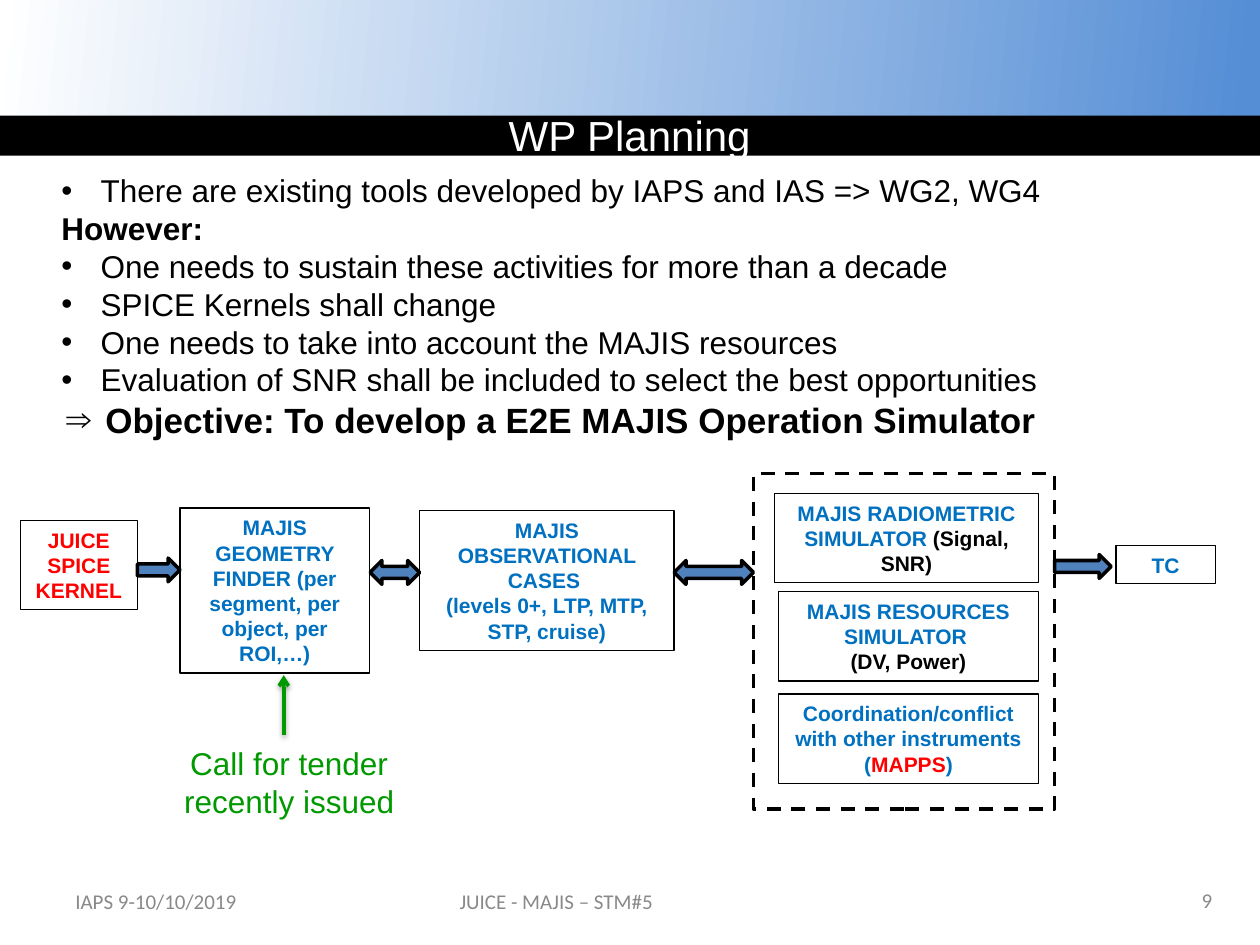
from lxml import etree
from pptx import Presentation
from pptx.dml.color import RGBColor
from pptx.enum import dml, shapes, text
from pptx.oxml import ns
from pptx.util import Cm, Pt

THEME = {
    "black": "000000", "white": "FFFFFF", "red": "FF0000", "blue": "0070C0",
    "green": "009900", "grey": "898989", "arrow": "4F81BD", "sky": "558ED5",
    "font": "Arial", "foot": "Calibri",
    "title": 24, "goal": 20, "body": 18, "small": 12,
}
KIND = shapes.MSO_SHAPE
LEFT, MID, RIGHT = text.PP_ALIGN.LEFT, text.PP_ALIGN.CENTER, text.PP_ALIGN.RIGHT

# Content: places are left, top, width, height in cm
TITLE = "WP Planning"
POINTS = [  # bullet, wording, size, bold, alignment
    ("•", "There are existing tools developed by IAPS and IAS => WG2, WG4", "body", False, LEFT),
    ("", "However:", "body", True, LEFT),
    ("•", "One needs to sustain these activities for more than a decade", "body", False, LEFT),
    ("•", "SPICE Kernels shall change", "body", False, LEFT),
    ("•", "One needs to take into account the MAJIS resources", "body", False, LEFT),
    ("•", "Evaluation of SNR shall be included to select the best opportunities",
     "body", False, LEFT),
    ("⇒", "Objective: To develop a E2E MAJIS Operation Simulator", "goal", True, MID),
]
BOXES = [  # place, paragraphs of (wording, colour) runs
    ((0.41, 10.49, 2.36, 1.8), [[("JUICE SPICE KERNEL", "red")]]),
    ((3.63, 10.24, 3.82, 3.33),
     [[("MAJIS GEOMETRY FINDER (per segment, per object, per ROI,…)", "blue")]]),
    ((8.46, 10.29, 5.13, 2.82),
     [[("MAJIS OBSERVATIONAL CASES ", "blue")],
      [("(levels 0+, LTP, MTP, STP, cruise)", "blue")]]),
    ((15.62, 9.95, 5.31, 1.8),
     [[("MAJIS RADIOMETRIC SIMULATOR ", "blue"), ("(Signal, SNR)", "black")]]),
    ((15.7, 11.93, 5.23, 1.8),
     [[("MAJIS RESOURCES SIMULATOR ", "blue")], [("(DV, Power)", "black")]]),
    ((15.7, 13.99, 5.23, 1.8),
     [[("Coordination/conflict with other instruments (", "blue"),
       ("MAPPS", "red"), (")", "blue")]]),
    ((22.5, 11, 2, 0.77), [[("TC", "blue")]]),
]
FRAME = (15.19, 9.55, 6.07, 6.76)
ARROWS = [
    (KIND.RIGHT_ARROW, (2.77, 11.25, 0.86, 0.48)),
    (KIND.LEFT_RIGHT_ARROW, (7.46, 11.3, 1, 0.48)),
    (KIND.LEFT_RIGHT_ARROW, (13.59, 11.3, 1.6, 0.48)),
    (KIND.RIGHT_ARROW, (21.26, 11.18, 1.14, 0.48)),
]
NOTE = ("Call for tender recently issued", (3.2, 14.88, 5.26, 1.8))
FOOT = [
    ("IAPS 9-10/10/2019", (1.27, 17.65, 5.92, 1.02), LEFT),
    ("JUICE - MAJIS – STM#5", (7.19, 17.65, 8.05, 1.02), MID),
    ("9", (23.22, 17.63, 1.47, 1.02), RIGHT),
]


def tint(name):
    return RGBColor.from_string(THEME[name])


def cms(place):
    return [Cm(v) for v in place]


def add_run(para, words, color, size="small", bold=False, font="font"):
    run = para.add_run()
    run.text = words
    run.font.name, run.font.size = THEME[font], Pt(THEME[size])
    run.font.bold, run.font.color.rgb = bold, tint(color)


def add_para(frame, first, align):
    para = frame.paragraphs[0] if first else frame.add_paragraph()
    para.alignment = align
    return para


def add_form(kind, place, fill=None, width=None):
    form = slide.shapes.add_shape(kind, *cms(place))
    form.shadow.inherit = False
    if fill:
        form.fill.solid()
        form.fill.fore_color.rgb = tint(fill)
    else:
        form.fill.background()
    if width:
        form.line.color.rgb, form.line.width = tint("black"), Pt(width)
    else:
        form.line.fill.background()
    return form


def add_text(place, wrap=True, anchor=text.MSO_ANCHOR.TOP):
    frame = slide.shapes.add_textbox(*cms(place)).text_frame
    frame.word_wrap, frame.vertical_anchor = wrap, anchor
    return frame


def add_xml(parent, tag, **attrs):
    return etree.SubElement(parent, ns.qn(tag), attrs)


deck = Presentation()
deck.slide_width, deck.slide_height = Cm(25.4), Cm(19.05)
slide = deck.slides.add_slide(deck.slide_layouts[5])

# Banner and title bar
sky = add_form(KIND.RECTANGLE, (0, 0, 25.4, 2.8), "sky")
sky.fill.gradient()
sky.fill.gradient_angle = 174
for stop, (spot, name) in zip(sky.fill.gradient_stops, [(0.01, "sky"), (1, "white")]):
    stop.position, stop.color.rgb = spot, tint(name)
bar = add_form(KIND.ROUNDED_RECTANGLE, (0, 2.33, 25.4, 0.81), "black")
bar.adjustments[0] = 0

title = slide.shapes.title
title.left, title.top, title.width, title.height = cms((10, 2.08, 5.44, 1.28))
title.element.getparent().append(title.element)  # in front of the bar
head = title.text_frame
head.word_wrap, head.vertical_anchor = False, text.MSO_ANCHOR.TOP
head.auto_size = text.MSO_AUTO_SIZE.SHAPE_TO_FIT_TEXT
add_run(add_para(head, True, LEFT), TITLE, "white", "title")

# Footer
for words, place, align in FOOT:
    frame = add_text(place, anchor=text.MSO_ANCHOR.MIDDLE)
    add_run(add_para(frame, True, align), words, "grey", font="foot")

# Bullet list
frame = add_text((0.99, 3.33, 20.83, 5.74), wrap=False)
frame.auto_size = text.MSO_AUTO_SIZE.SHAPE_TO_FIT_TEXT
for i, (mark, words, size, bold, align) in enumerate(POINTS):
    para = add_para(frame, i == 0, align)
    if mark:
        props = para._p.get_or_add_pPr()
        props.set("marL", str(Cm(0.79)))
        props.set("indent", str(-Cm(0.79)))
        add_xml(props, "a:buFont", typeface=THEME["font"])
        add_xml(props, "a:buChar", char=mark)
    add_run(para, words, "black", size, bold)

# Flow chart
for place, paras in BOXES:
    frame = add_form(KIND.RECTANGLE, place, width=0.75).text_frame
    frame.word_wrap = True
    frame.auto_size = text.MSO_AUTO_SIZE.SHAPE_TO_FIT_TEXT
    for i, runs in enumerate(paras):
        para = add_para(frame, i == 0, MID)
        for words, color in runs:
            add_run(para, words, color, bold=True)
add_form(KIND.RECTANGLE, FRAME, width=2).line.dash_style = dml.MSO_LINE.DASH
for kind, place in ARROWS:
    add_form(kind, place, "arrow", 2)

# Tender note and its arrow
words, place = NOTE
add_run(add_para(add_text(place), True, MID), words, "green", "body")
line = slide.shapes.add_connector(
    shapes.MSO_CONNECTOR.STRAIGHT, *cms((5.72, 14.81, 5.72, 13.61)))
line.line.color.rgb, line.line.width = tint("green"), Pt(2)
add_xml(line.line._get_or_add_ln(), "a:tailEnd", type="arrow")
glow = add_xml(add_xml(line.element.spPr, "a:effectLst"), "a:outerShdw",
               blurRad=str(Pt(3.1)), dist=str(Pt(1.6)), dir="5400000", rotWithShape="0")
add_xml(add_xml(glow, "a:srgbClr", val=THEME["black"]), "a:alpha", val="38000")

deck.save("out.pptx")
